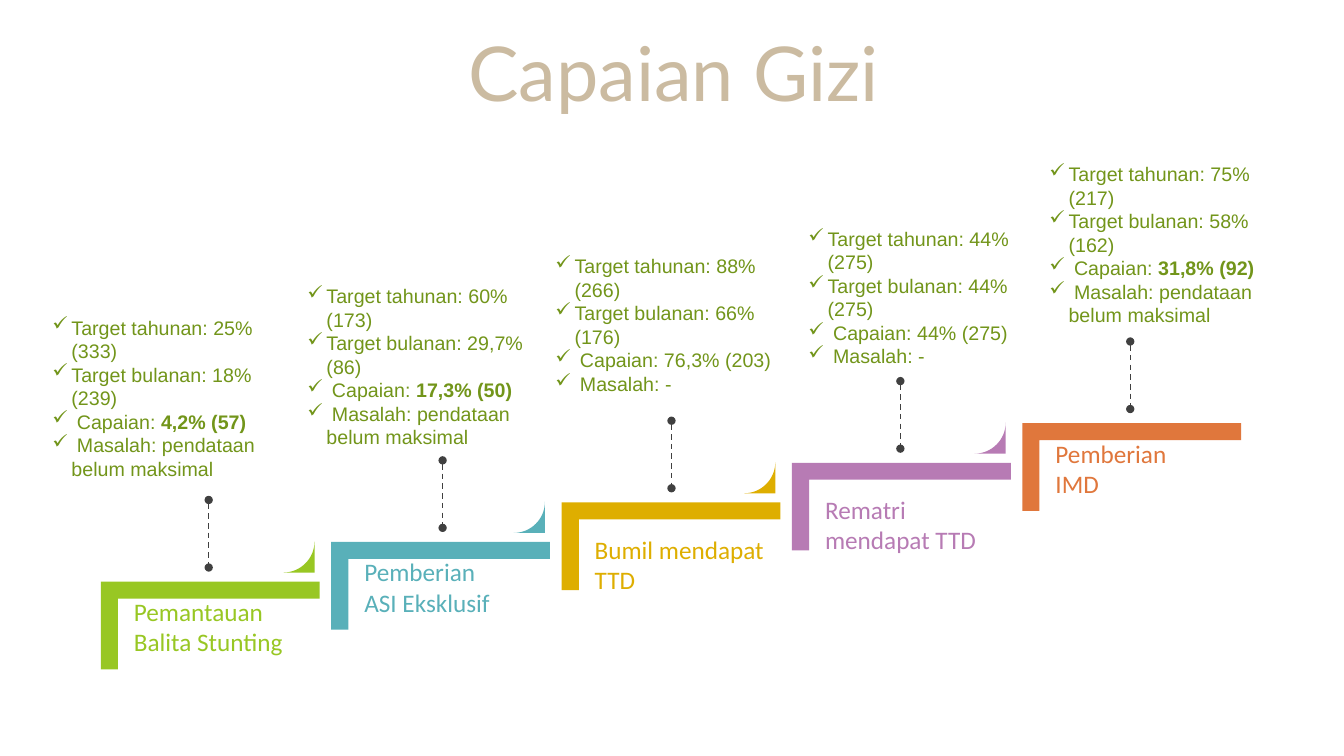
import math
from lxml import etree
from pptx import Presentation, util as u
from pptx.dml.color import RGBColor
from pptx.enum import dml, shapes, text
from pptx.oxml.ns import qn

COLORS = {
    "title": "CBBBA1", "note": "72951A", "pin": "404040",
    "green": "98C723", "teal": "59B0B9", "gold": "DEAE00",
    "purple": "B77BB4", "orange": "E0773C",
}
W, H = 13.33, 7.5
X0, Y0, DX, DY = 1.0, 5.77, 2.285, -0.393
STEP_W, STEP_H, LEAF = 2.17, 0.87, 0.31

STEPS = [
    ("green", "Pemantauan Balita Stunting", 1.99, 0.09, 2.07, (0.42, 3.08, 2.45, 1.75),
     "25% (333)", "18% (239)", "4,2% (57)", True, "pendataan belum maksimal"),
    ("teal", "Pemberian ASI Eksklusif", 1.52, 0.09, 4.39, (2.95, 2.77, 2.43, 1.75),
     "60% (173)", "29,7% (86)", "17,3% (50)", True, "pendataan belum maksimal"),
    ("gold", "Bumil mendapat TTD", 1.94, 0.26, 6.66, (5.41, 2.47, 2.56, 1.51),
     "88% (266)", "66% (176)", "76,3% (203)", False, "-"),
    ("purple", "Rematri mendapat TTD", 1.89, 0.26, 8.93, (7.92, 2.2, 2.45, 1.51),
     "44% (275)", "44% (275)", "44% (275)", False, "-"),
    ("orange", "Pemberian IMD", 1.52, 0.09, 11.21, (10.31, 1.56, 2.41, 1.75),
     "75% (217)", "58% (162)", "31,8% (92)", True, "pendataan belum maksimal"),
]


def paint(sp, color):
    sp.shadow.inherit = False
    sp.fill.solid()
    sp.fill.fore_color.rgb = RGBColor.from_string(COLORS[color])
    sp.line.fill.background()


def style(p, name, size, color):
    p.font.name = name
    p.font.size = u.Pt(size)
    p.font.color.rgb = RGBColor.from_string(COLORS[color])


prs = Presentation()
prs.slide_width, prs.slide_height = u.Inches(W), u.Inches(H)
s = prs.slides.add_slide(prs.slide_layouts[5])

title = s.shapes.title
title.left, title.top, title.width, title.height = map(u.Inches, (0.35, 0.37, 12.66, 0.79))
tf = title.text_frame
tf.text = "Capaian Gizi"
tf.auto_size = text.MSO_AUTO_SIZE.NONE
tf.vertical_anchor = text.MSO_ANCHOR.MIDDLE
p = tf.paragraphs[0]
p.alignment = text.PP_ALIGN.CENTER
p.line_spacing = 0.9
p.space_before = u.Pt(10)
style(p, "Lato", 54, "title")

for i, (color, label, label_w, label_dy, pin_x, note_box,
        yearly, monthly, result, bold, problem) in enumerate(STEPS):
    x, y = X0 + i * DX, Y0 + i * DY

    sp = s.shapes.add_shape(shapes.MSO_SHAPE.RECTANGLE,
                            *map(u.Inches, (x, y, STEP_W, STEP_H)))
    geom = sp._element.spPr.find(qn("a:prstGeom"))
    geom.set("prst", "corner")
    guides = geom.find(qn("a:avLst"))
    for name, value in (("adj1", 19300), ("adj2", 19600)):
        etree.SubElement(guides, qn("a:gd"), name=name, fmla=f"val {value}")
    sp.rotation = 180
    sp._element.spPr.find(qn("a:xfrm")).set("flipH", "1")
    paint(sp, color)

    if i < len(STEPS) - 1:
        left, top = x + 1.81, y - 0.4
        arc = [(left + LEAF * math.cos(a), top + LEAF * math.sin(a))
               for a in (math.pi / 2 * k / 24 for k in range(25))]
        fb = s.shapes.build_freeform(u.Inches(left + LEAF), u.Inches(top + LEAF), scale=1.0)
        fb.add_line_segments([(u.Inches(a), u.Inches(b)) for a, b in arc], close=True)
        paint(fb.convert_to_shape(), color)

    tb = s.shapes.add_textbox(*map(u.Inches, (x + 0.23, y + label_dy, label_w, 0.71)))
    tf = tb.text_frame
    tf.word_wrap = True
    tf.vertical_anchor = text.MSO_ANCHOR.MIDDLE
    tf.text = label
    style(tf.paragraphs[0], "Calibri", 18, color)

    tb = s.shapes.add_textbox(*map(u.Inches, note_box))
    tf = tb.text_frame
    tf.word_wrap = True
    lines = [("Target tahunan: ", yearly), ("Target bulanan: ", monthly),
             (" Capaian: ", result), (" Masalah: ", problem)]
    for j, (name, value) in enumerate(lines):
        p = tf.paragraphs[0] if j == 0 else tf.add_paragraph()
        p.add_run().text = name
        r = p.add_run()
        r.text = value
        if bold and value == result:
            r.font.bold = True
        style(p, "Arial", 14, "note")
        pPr = p._p.get_or_add_pPr()
        pPr.set("marL", str(u.Inches(0.19)))
        pPr.set("indent", str(-u.Inches(0.19)))
        bullet = etree.Element(qn("a:buChar"), char="✓")
        pPr.insert_element_before(bullet, "a:tabLst", "a:defRPr", "a:extLst")

    pin = s.shapes.add_connector(shapes.MSO_CONNECTOR.STRAIGHT,
                                 *map(u.Inches, (pin_x, y - 0.81, pin_x, y - 0.14)))
    pin.line.color.rgb = RGBColor.from_string(COLORS["pin"])
    pin.line.width = u.Pt(1)
    pin.line.dash_style = dml.MSO_LINE.DASH
    ln = pin._element.spPr.find(qn("a:ln"))
    for end in ("a:headEnd", "a:tailEnd"):
        etree.SubElement(ln, qn(end), type="oval")
    etree.SubElement(pin._element.spPr, qn("a:effectLst"))

prs.save("out.pptx")
